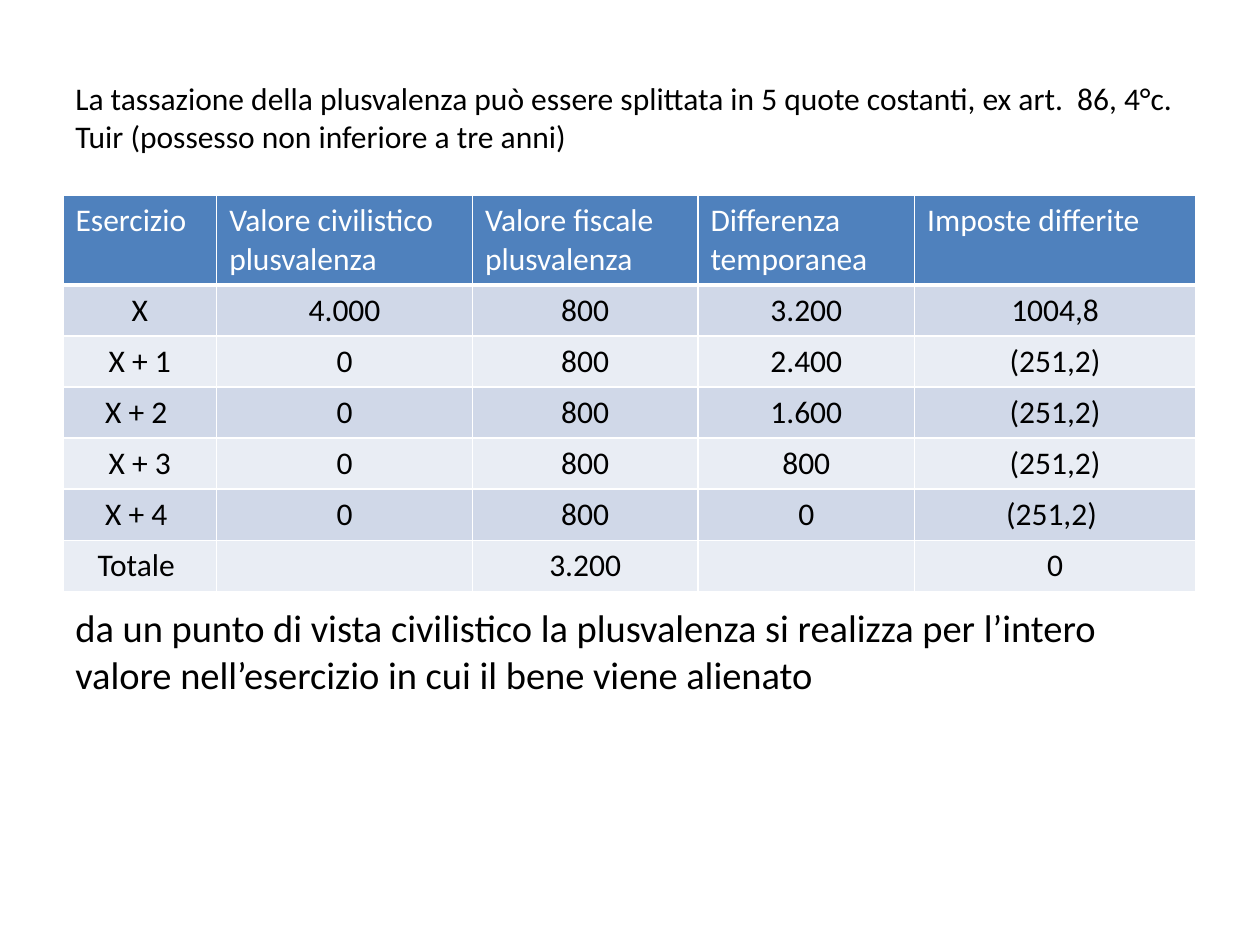
from lxml import etree
from pptx import Presentation
from pptx import util as u
from pptx.dml.color import RGBColor
from pptx.enum import shapes, text
from pptx.oxml.ns import qn

COLORS = {"white": "FFFFFF", "black": "000000", "header": "4F81BD",
          "odd": "D0D8E8", "even": "E9EDF4"}
COLUMN_SHARES = [0.122, 0.203, 0.179, 0.172, 0.223]
ROWS = [
    ["Esercizio", "Valore civilistico plusvalenza", "Valore fiscale plusvalenza",
     "Differenza temporanea", "Imposte differite"],
    ["X", "4.000", "800", "3.200", "1004,8"],
    ["X + 1", "0", "800", "2.400", "(251,2)"],
    ["X + 2 ", "0", "800", "1.600", "(251,2)"],
    ["X + 3", "0", "800", "800", "(251,2)"],
    ["X + 4 ", "0", "800", "0", "(251,2) "],
    ["Totale ", "", "3.200", "", "0"],
]


def write(tf, content, size, color, align):
    p = tf.paragraphs[0]
    p.alignment = align
    r = p.add_run()
    r.text = content
    for name, value in {"name": "Calibri", "size": u.Pt(size), "bold": False}.items():
        setattr(r.font, name, value)
    r.font.color.rgb = RGBColor.from_string(COLORS[color])


def add_border(cell, side, points):
    """Draw a white line on one side (L, R, T or B); call before filling the cell."""
    ln = etree.SubElement(cell._tc.get_or_add_tcPr(), qn(f"a:ln{side}"), w=str(u.Pt(points)))
    fill = etree.SubElement(ln, qn("a:solidFill"))
    etree.SubElement(fill, qn("a:srgbClr"), val=COLORS["white"])


prs = Presentation()
prs.slide_width, prs.slide_height = u.Inches(10), u.Inches(7.5)
W, H = prs.slide_width, prs.slide_height
s = prs.slides.add_slide(prs.slide_layouts[6])
left, width = int(W * 0.05), int(W * 0.9)
title_top, title_height = int(H * 0.04), H // 6
row_height = int(H * 0.054)
LEFT, CENTER = text.PP_ALIGN.LEFT, text.PP_ALIGN.CENTER
frame_format = {"word_wrap": True, "auto_size": text.MSO_AUTO_SIZE.NONE,
                "vertical_anchor": text.MSO_ANCHOR.MIDDLE}

# Title
title = s.shapes.add_shape(shapes.MSO_SHAPE.RECTANGLE, left, title_top, width, title_height)
title.shadow.inherit = False
for fill in (title.fill, title.line.fill):
    fill.solid()
    fill.fore_color.rgb = RGBColor.from_string(COLORS["white"])
title.line.width = u.Pt(2)
write(title.text_frame,
      "La tassazione della plusvalenza può essere splittata in 5 quote costanti, "
      "ex art.  86, 4°c. Tuir (possesso non inferiore a tre anni)", 18, "black", LEFT)

# Table
table = s.shapes.add_table(len(ROWS), len(COLUMN_SHARES), left, title_top + title_height,
                           width, row_height * len(ROWS)).table
for column, share in zip(table.columns, COLUMN_SHARES):
    column.width = int(W * share)
for i, values in enumerate(ROWS):
    table.rows[i].height = row_height
    header = i == 0
    background = "header" if header else "odd" if i % 2 else "even"
    for j, value in enumerate(values):
        cell = table.cell(i, j)
        for side in "LRB" if i == 1 else "LRTB":
            add_border(cell, side, 3 if header and side == "B" else 1)
        cell.fill.solid()
        cell.fill.fore_color.rgb = RGBColor.from_string(COLORS[background])
        if value:
            write(cell.text_frame, value, 18, "white" if header else "black",
                  LEFT if header else CENTER)

# Closing remark
remark = s.shapes.add_textbox(left, int(H * 0.665), width, int(H * 0.095))
remark.text_frame.margin_bottom = u.Inches(0.41)
write(remark.text_frame,
      "da un punto di vista civilistico la plusvalenza si realizza per l’intero "
      "valore nell’esercizio in cui il bene viene alienato", 22, "black", LEFT)

for sp in (title, remark):
    for name, value in frame_format.items():
        setattr(sp.text_frame, name, value)

prs.save("out.pptx")
